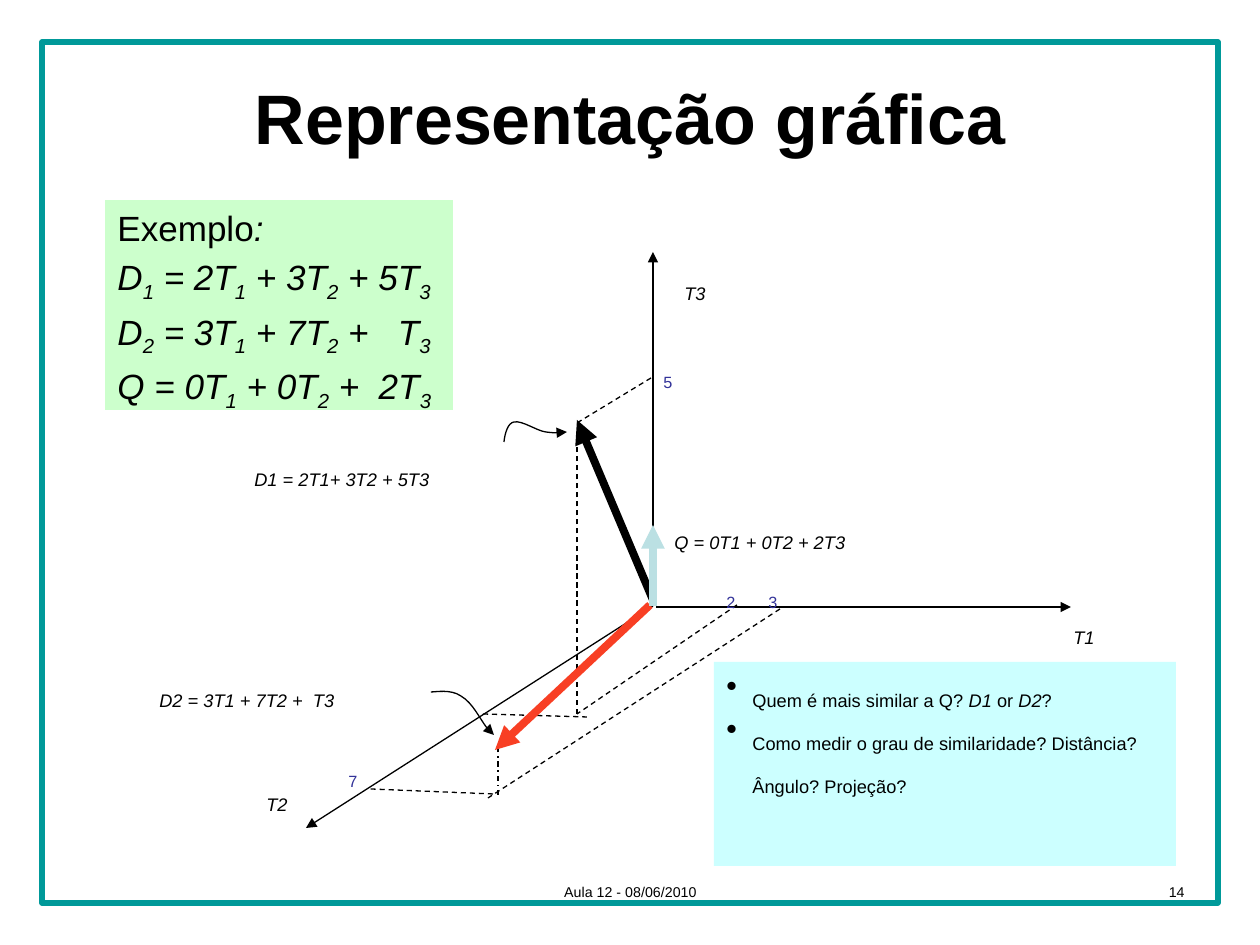
from dataclasses import dataclass

import pptx
import pptx.dml.color
import pptx.enum.dml
import pptx.enum.shapes
import pptx.enum.text
import pptx.oxml
import pptx.oxml.ns
import pptx.util

EMU_PER_PX = 914400 // 126
DASH = pptx.enum.dml.MSO_LINE.DASH
DASH_DOT = pptx.enum.dml.MSO_LINE.DASH_DOT
ALIGN = pptx.enum.text.PP_ALIGN
ANCHOR = pptx.enum.text.MSO_ANCHOR


@dataclass(frozen=True)
class Theme:
    font: str = "Arial"
    ink: str = "000000"
    frame: str = "009999"
    example: str = "CCFFCC"
    questions: str = "CCFFFF"
    number: str = "333399"
    document_2: str = "F83F24"
    query: str = "BBE0E3"
    title_size: int = 40
    example_size: int = 20
    label_size: int = 18
    number_size: int = 16
    footer_size: int = 14
    thin: float = 0.75
    border: float = 3
    thick: float = 4.5


def px(value):
    return pptx.util.Emu(value * EMU_PER_PX)


def color(value):
    return pptx.dml.color.RGBColor.from_string(value)


def subscripts(formula):
    """Split 'D_1 = 2T_1' into italic runs, one digit lowered after each '_'."""
    first, *others = formula.split("_")
    runs = [(first, True, False)]
    for piece in others:
        runs.append((piece[0], True, True))
        if piece[1:]:
            runs.append((piece[1:], True, False))
    return runs


class SlideBuilder:
    def __init__(self, slide, theme):
        self.slide = slide
        self.theme = theme

    def rectangle(self, box, fill=None, line=None):
        shape = self.slide.shapes.add_shape(
            pptx.enum.shapes.MSO_SHAPE.RECTANGLE, *map(px, box))
        shape.shadow.inherit = False
        if fill:
            shape.fill.solid()
            shape.fill.fore_color.rgb = color(fill)
        else:
            shape.fill.background()
        if line:
            shape.line.color.rgb = color(line)
            shape.line.width = pptx.util.Pt(self.theme.border)
        else:
            shape.line.fill.background()
        return shape

    def style_run(self, run, size, ink=None, bold=False, italic=False, lowered=False):
        run.font.name = self.theme.font
        run.font.size = pptx.util.Pt(size)
        run.font.color.rgb = color(ink or self.theme.ink)
        run.font.bold = bold
        run.font.italic = italic
        if lowered:
            run._r.get_or_add_rPr().set("baseline", "-25000")

    def text(self, box, text, size, align=ALIGN.LEFT, anchor=ANCHOR.TOP, **style):
        frame = self.slide.shapes.add_textbox(*map(px, box)).text_frame
        frame.word_wrap = True
        frame.vertical_anchor = anchor
        frame.text = text
        paragraph = frame.paragraphs[0]
        paragraph.alignment = align
        self.style_run(paragraph.runs[0], size, **style)

    def panel(self, box, fill, size, paragraphs, indent, space=0, bullet=False):
        """Filled box; each paragraph is a list of (text, italic, lowered)."""
        frame = self.rectangle(box, fill).text_frame
        frame.word_wrap = True
        frame.vertical_anchor = ANCHOR.TOP
        for index, runs in enumerate(paragraphs):
            paragraph = frame.add_paragraph() if index else frame.paragraphs[0]
            paragraph.alignment = ALIGN.LEFT
            paragraph.space_before = pptx.util.Pt(space)
            properties = paragraph._p.get_or_add_pPr()
            properties.set("marL", str(px(indent)))
            properties.set("indent", str(-px(indent)))
            if bullet:
                mark = pptx.oxml.ns.qn("a:buChar")
                properties.makeelement(mark)
                properties.append(properties.makeelement(mark, {"char": "•"}))
            for text, italic, lowered in runs:
                run = paragraph.add_run()
                run.text = text
                self.style_run(run, size, italic=italic, lowered=lowered)

    def style_line(self, shape, ink, width, arrow, dash=None):
        shape.line.color.rgb = color(ink)
        shape.line.width = pptx.util.Pt(width)
        if dash:
            shape.line.dash_style = dash
        if arrow:
            line = shape.line._get_or_add_ln()
            line.append(line.makeelement(
                pptx.oxml.ns.qn("a:tailEnd"), {"type": "triangle"}))

    def line(self, start, end, ink=None, width=None, arrow=False, dash=None):
        connector = self.slide.shapes.add_connector(
            pptx.enum.shapes.MSO_CONNECTOR.STRAIGHT, *map(px, start + end))
        self.style_line(connector, ink or self.theme.ink,
                        width or self.theme.thin, arrow, dash)
        properties = connector._element.spPr
        properties.append(properties.makeelement(pptx.oxml.ns.qn("a:effectLst")))

    def curved_arrow(self, start, *points):
        """Bezier arrow: every three points are two controls and an end."""
        builder = self.slide.shapes.build_freeform(*start, scale=EMU_PER_PX)
        builder.add_line_segments(points, close=False)
        shape = builder.convert_to_shape()
        shape.shadow.inherit = False
        shape.fill.background()
        segments = list(shape._element.iter(pptx.oxml.ns.qn("a:lnTo")))
        for first in range(0, len(segments), 3):
            curve = segments[first].makeelement(pptx.oxml.ns.qn("a:cubicBezTo"))
            segments[first].addprevious(curve)
            for segment in segments[first:first + 3]:
                curve.append(segment[0])
                segment.getparent().remove(segment)
        self.style_line(shape, self.theme.ink, self.theme.thin, arrow=True)


def main():
    presentation = pptx.Presentation()
    presentation.slide_width = pptx.util.Inches(10)
    presentation.slide_height = pptx.util.Inches(7.5)
    theme = Theme()
    slide = presentation.slides.add_slide(presentation.slide_layouts[6])
    build = SlideBuilder(slide, theme)

    # Frame and title
    build.rectangle((42, 42, 1176, 861), line=theme.frame)
    build.text((63, 38, 1134, 158), "Representação gráfica", theme.title_size,
               ALIGN.CENTER, ANCHOR.MIDDLE, bold=True)

    # Example formulas
    formulas = ("D_1 = 2T_1 + 3T_2 + 5T_3", "D_2 = 3T_1 + 7T_2 +   T_3",
                "Q = 0T_1 + 0T_2 +  2T_3")
    heading = [("Exemplo", False, False), (":", True, False)]
    build.panel((105, 200, 348, 210), theme.example, theme.example_size,
                [heading, *map(subscripts, formulas)], indent=48, space=4)

    # Axes
    origin = (653, 606)
    build.line((656, 607), (1071, 607), arrow=True)
    for tip in ((306, 828), (653, 252)):
        build.line(origin, tip, arrow=True)

    # Projections of D1, then of D2
    for start, end in (((737, 605), (577, 714)), ((483, 714), (587, 717)),
                       ((577, 714), (577, 441)), ((651, 378), (577, 423)),
                       ((780, 609), (488, 798)), ((493, 794), (370, 789))):
        build.line(start, end, dash=DASH)
    build.line((498, 795), (498, 746), dash=DASH_DOT)

    # Vectors D1, D2 and Q
    for start, end, ink in (((653, 600), (577, 420), theme.ink),
                            ((650, 605), (495, 750), theme.document_2),
                            (origin, (653, 525), theme.query)):
        build.line(start, end, ink, theme.thick, arrow=True)

    # Axis and vector labels
    for left, top, width, label in (
            (672, 255, 57, "T3"), (1061, 599, 57, "T1"), (254, 766, 57, "T2"),
            (242, 441, 292, "D1 = 2T1+ 3T2 + 5T3"),
            (147, 662, 290, "D2 = 3T1 + 7T2 +  T3"),
            (662, 504, 290, "Q = 0T1 + 0T2 + 2T3")):
        build.text((left, top, width, 52), label, theme.label_size,
                   italic=True, lowered=True)

    # Pointers from labels to vectors
    build.curved_arrow((504, 442), (505, 433), (508, 423), (514, 422),
                       (522, 420), (537, 431), (546, 432),
                       (554, 433), (561, 433), (567, 432))
    build.curved_arrow((431, 692), (436, 692), (451, 689), (461, 696),
                       (473, 703), (486, 731), (494, 735))

    # Axis values
    for left, top, value in ((336, 746, "7"), (756, 567, "3"),
                             (714, 567, "2"), (651, 347, "5")):
        build.text((left, top, 39, 47), value, theme.number_size,
                   ink=theme.number, lowered=True)

    # Questions
    questions = [
        [("Quem é mais similar a Q? ", False, True), ("D1", True, True),
         (" or ", False, True), ("D2", True, True), ("?", False, True)],
        [("Como medir o grau de similaridade? Distância? Ângulo? Projeção?",
          False, True)]]
    build.panel((714, 662, 462, 204), theme.questions, theme.label_size,
                questions, indent=26, bullet=True)

    # Footer
    build.text((431, 861, 399, 66), "Aula 12 - 08/06/2010", theme.footer_size,
               ALIGN.CENTER, lowered=True)
    build.text((903, 861, 294, 66), "14", theme.footer_size,
               ALIGN.RIGHT, lowered=True)

    presentation.save("out.pptx")


if __name__ == "__main__":
    main()
